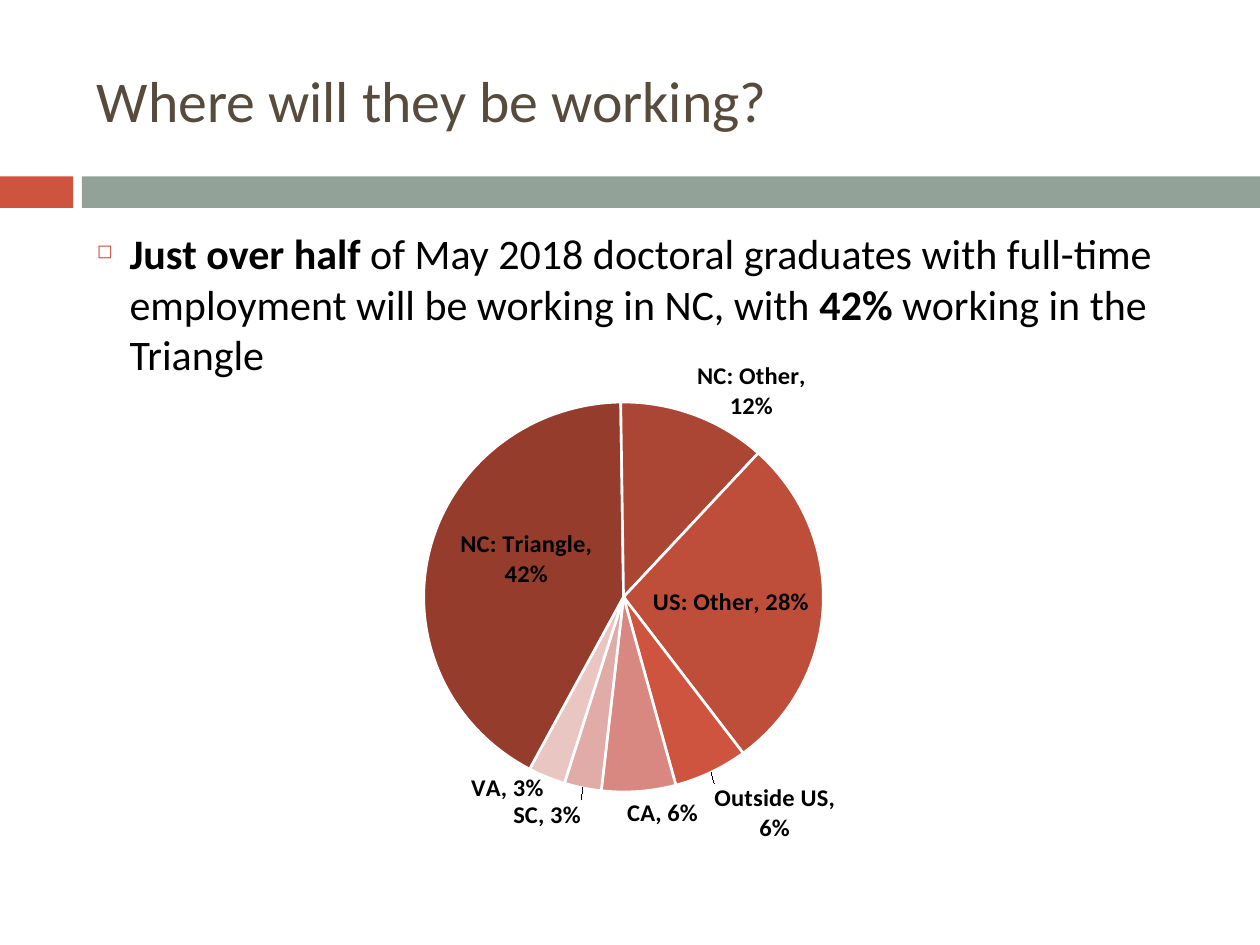
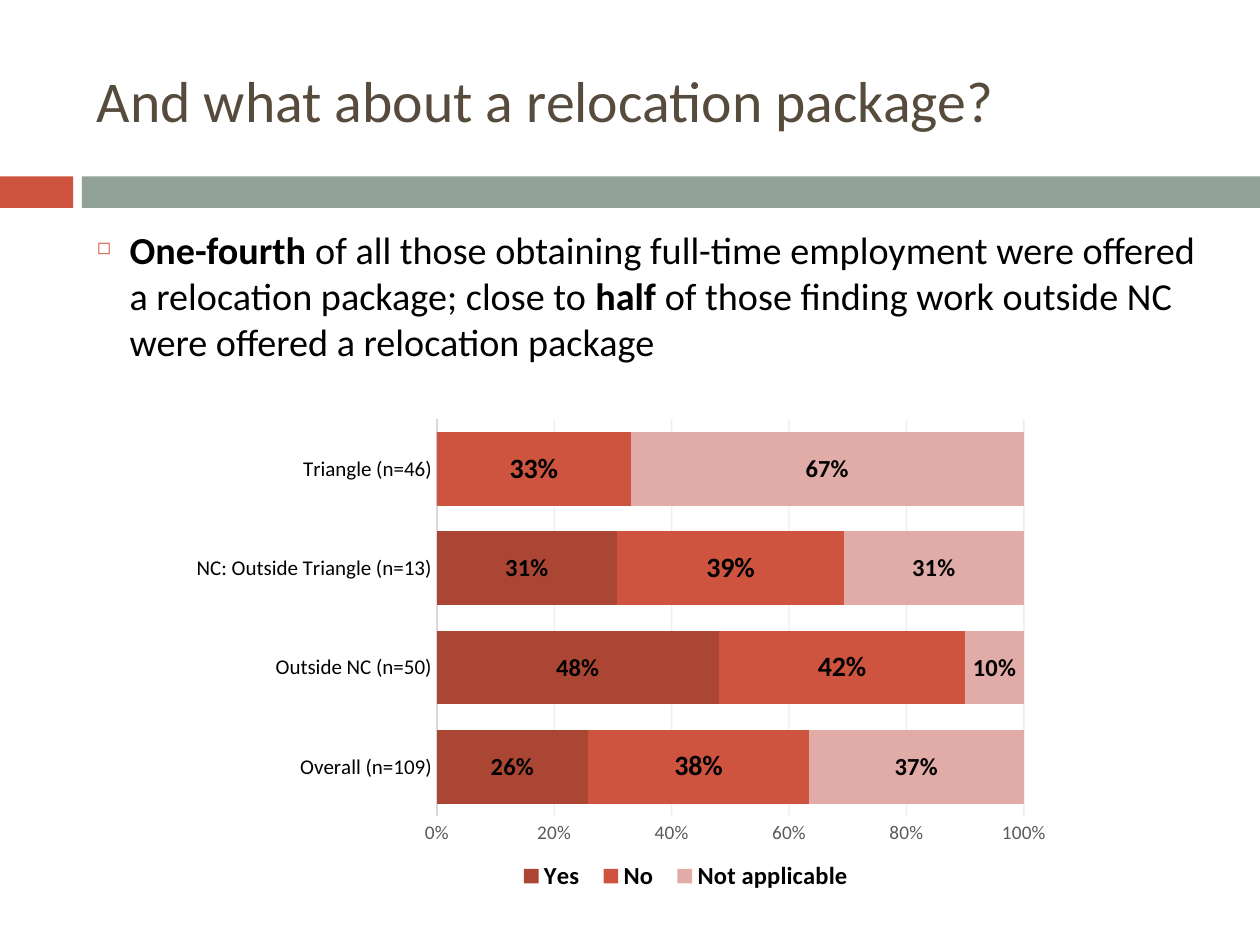
from lxml import etree
from pptx import Presentation
from pptx.chart.data import CategoryChartData
from pptx.dml.color import RGBColor
from pptx.enum.chart import XL_CHART_TYPE, XL_LABEL_POSITION, XL_LEGEND_POSITION, XL_TICK_MARK
from pptx.enum.shapes import MSO_SHAPE
from pptx.enum.text import MSO_ANCHOR
from pptx.oxml.ns import qn
from pptx.util import Inches, Pt

PIE, STACKED_BAR = XL_CHART_TYPE.PIE, XL_CHART_TYPE.BAR_STACKED_100
CENTER, OUTSIDE_END = XL_LABEL_POSITION.CENTER, XL_LABEL_POSITION.OUTSIDE_END
NO_TICKS = XL_TICK_MARK.NONE

FONT = "Calibri"
RED = RGBColor(0xCF, 0x54, 0x3F)
SAGE = RGBColor(0x93, 0xA2, 0x99)
BROWN = RGBColor(0x56, 0x4B, 0x3C)
BLACK = RGBColor(0, 0, 0)
WHITE = RGBColor(0xFF, 0xFF, 0xFF)
DARK_RED = RGBColor(0xAC, 0x46, 0x34)
PALE_RED = RGBColor(0xE1, 0xAB, 0xA7)
AXIS_TEXT = RGBColor(0x59, 0x59, 0x59)
AXIS_LINE = RGBColor(0xD9, 0xD9, 0xD9)
GRID_LINE = RGBColor(0xBF, 0xBF, 0xBF)


def set_font(font, size, color=BLACK, bold=False):
    font.name, font.size, font.bold = FONT, Pt(size), bold
    font.color.rgb = color


def add_layout(parent, position, **settings):
    """Insert a manual chart layout at the given child position."""
    old_layout = parent.find(qn("c:layout"))
    if old_layout is not None:
        parent.remove(old_layout)
    layout = etree.Element(qn("c:layout"))
    manual = etree.SubElement(layout, qn("c:manualLayout"))
    for name, value in settings.items():
        etree.SubElement(manual, qn("c:" + name), val=str(value))
    parent.insert(position, layout)


presentation = Presentation()
presentation.slide_width, presentation.slide_height = Inches(10), Inches(7.5)

# Title, band and bulleted statement; each run is (text, bold)
contents = [
    ("Where will they be working?", 1.76, 24, [
        ("Just over half ", True),
        ("of May 2018 doctoral graduates with full-time employment will be working in NC, with ", False),
        ("42% ", True),
        ("working in the Triangle", False)]),
    ("And what about a relocation package?", 1.75, 21.8, [
        ("One-fourth ", True),
        ("of all those obtaining full-time employment were offered a relocation package; close to ", False),
        ("half ", True),
        ("of those finding work outside NC were offered a relocation package", False)]),
]
slides = []
for title, body_top, body_size, runs in contents:
    slide = presentation.slides.add_slide(presentation.slide_layouts[6])
    slides.append(slide)

    for left, width, color in [(0, 0.58, RED), (0.65, 9.35, SAGE)]:
        band = slide.shapes.add_shape(
            MSO_SHAPE.RECTANGLE, Inches(left), Inches(1.4), Inches(width), Inches(0.25))
        band.shadow.inherit = False
        band.fill.solid()
        band.fill.fore_color.rgb = color
        band.line.fill.background()

    title_box = slide.shapes.add_textbox(Inches(0.67), Inches(0.25), Inches(8.92), Inches(1.08))
    title_box.text_frame.word_wrap = True
    title_box.text_frame.vertical_anchor = MSO_ANCHOR.MIDDLE
    paragraph = title_box.text_frame.paragraphs[0]
    paragraph.text = title
    set_font(paragraph.font, 33, BROWN)

    body_box = slide.shapes.add_textbox(Inches(0.67), Inches(body_top), Inches(8.92), Inches(4.92))
    body_box.text_frame.word_wrap = True
    body_box.text_frame.margin_right = 0
    paragraph = body_box.text_frame.paragraphs[0]
    paragraph.space_before = Pt(5.2)
    for text, bold in runs:
        run = paragraph.add_run()
        run.text = text
        set_font(run.font, body_size, bold=bold)

    # Hollow square bullet with hanging indent
    properties = paragraph._p.get_or_add_pPr()
    properties.set("marL", str(Inches(0.26)))
    properties.set("indent", str(-Inches(0.26)))
    bullet_color = etree.SubElement(properties, qn("a:buClr"))
    etree.SubElement(bullet_color, qn("a:srgbClr"), val=str(RED))
    etree.SubElement(properties, qn("a:buSzPct"), val="46000")
    etree.SubElement(properties, qn("a:buChar"), char="◻")

pie_slide, package_slide = slides

# Pie of work places: name, percent, colour, label position, label shift
places = [
    ("NC: Triangle", 42, RGBColor(0x95, 0x3C, 0x2D), CENTER, (0, -0.03)),
    ("NC: Other", 12, DARK_RED, OUTSIDE_END, None),
    ("US: Other", 28, RGBColor(0xBE, 0x4D, 0x3A), CENTER, (0.01, 0)),
    ("Outside US", 6, RED, OUTSIDE_END, (0, 0.01)),
    ("CA", 6, RGBColor(0xD8, 0x88, 0x80), OUTSIDE_END, (0.03, 0)),
    ("SC", 3, PALE_RED, OUTSIDE_END, (0, 0.01)),
    ("VA", 3, RGBColor(0xEA, 0xC6, 0xC3), OUTSIDE_END, (0, -0.02)),
]
chart_data = CategoryChartData(number_format="0")
chart_data.categories = [place[0] for place in places]
chart_data.add_series("Series 1", [place[1] for place in places])
chart = pie_slide.shapes.add_chart(
    PIE, Inches(1.9), Inches(2.77), Inches(6.16), Inches(4.12), chart_data).chart
set_font(chart.font, 10)
chart.has_title = chart.has_legend = False
plot = chart.plots[0]
plot.vary_by_categories = True
series = plot.series[0]

for index, (name, percent, color, position, shift) in enumerate(places):
    point = series.points[index]
    point.format.fill.solid()
    point.format.fill.fore_color.rgb = color
    point.format.line.color.rgb = WHITE
    point.format.line.width = Pt(1.5)
    set_font(point.data_label.font, 14, bold=True)
    point.data_label.position = position

# Labels show category and percent
label_flags = {"showLegendKey": 0, "showVal": 0, "showCatName": 1,
               "showSerName": 0, "showPercent": 1, "showBubbleSize": 0}
for place, label in zip(places, series._element.iter(qn("c:dLbl"))):
    for flag, value in label_flags.items():
        element = label.find(qn("c:" + flag))
        if element is None:
            element = etree.SubElement(label, qn("c:" + flag))
        element.set("val", str(value))
    etree.SubElement(label, qn("c:separator")).text = ", "
    shift = place[-1]
    if shift:
        add_layout(label, 1, x=shift[0], y=shift[1])

plot_area = chart._chartSpace.find(".//" + qn("c:plotArea"))
add_layout(plot_area, 0, layoutTarget="inner", xMode="edge", yMode="edge",
           x=0.23, y=0.08, w=0.53, h=0.77)
pie = plot_area.find(qn("c:pieChart"))
angle = pie.find(qn("c:firstSliceAng"))
if angle is None:
    angle = etree.SubElement(pie, qn("c:firstSliceAng"))
angle.set("val", "208")

# Stacked bars of relocation offers: name, shares, colour, label size
answers = [
    ("Yes", [0.26, 0.48, 0.31, 0], DARK_RED, 14),
    ("No", [0.38, 0.42, 0.39, 0.33], RED, 16),
    ("Not applicable", [0.37, 0.1, 0.31, 0.67], PALE_RED, 14),
]
chart_data = CategoryChartData(number_format="0%")
chart_data.categories = ["Overall (n=109)", "Outside NC (n=50)",
                         "NC: Outside Triangle (n=13)", "Triangle (n=46)"]
for name, shares, color, size in answers:
    chart_data.add_series(name, shares)
chart = package_slide.shapes.add_chart(
    STACKED_BAR, Inches(1.42), Inches(3.25), Inches(7.06), Inches(3.94), chart_data).chart
set_font(chart.font, 10)
chart.has_title = False
plot = chart.plots[0]
plot.vary_by_categories = False
plot.gap_width, plot.overlap = 35, 100

for series, (name, shares, color, size) in zip(plot.series, answers):
    series.format.fill.solid()
    series.format.fill.fore_color.rgb = color
    labels = series.data_labels
    labels.show_value = True
    labels.position = CENTER
    labels.number_format = "0%;;"  # leaves zero unlabelled
    labels.number_format_is_linked = False
    set_font(labels.font, size, bold=True)

# Axes and gridlines
category_axis, value_axis = chart.category_axis, chart.value_axis
for axis, size, color in [(category_axis, 12, BLACK), (value_axis, 11, AXIS_TEXT)]:
    axis.major_tick_mark = axis.minor_tick_mark = NO_TICKS
    set_font(axis.tick_labels.font, size, color)
category_axis.format.line.color.rgb = AXIS_LINE
category_axis.format.line.width = Pt(0.75)
value_axis.format.line.fill.background()
value_axis.minimum_scale, value_axis.maximum_scale, value_axis.major_unit = 0, 1, 0.2
value_axis.tick_labels.number_format = "0%"
value_axis.tick_labels.number_format_is_linked = False
value_axis.has_major_gridlines = True
grid_line = value_axis.major_gridlines.format.line
grid_line.color.rgb = GRID_LINE
grid_line.width = Pt(0.75)
grid_color = value_axis._element.find(qn("c:majorGridlines")).find(".//" + qn("a:srgbClr"))
etree.SubElement(grid_color, qn("a:alpha"), val="25000")

# Legend and plot area
chart.has_legend = True
chart.legend.position = XL_LEGEND_POSITION.BOTTOM
chart.legend.include_in_layout = False
set_font(chart.legend.font, 14, bold=True)
add_layout(chart.legend._element, 1, xMode="edge", yMode="edge", x=0.37, y=0.9, w=0.4, h=0.08)
add_layout(chart._chartSpace.find(".//" + qn("c:plotArea")), 0,
           layoutTarget="inner", xMode="edge", yMode="edge", x=0.29, y=0.02, w=0.66, h=0.8)

presentation.save("out.pptx")
